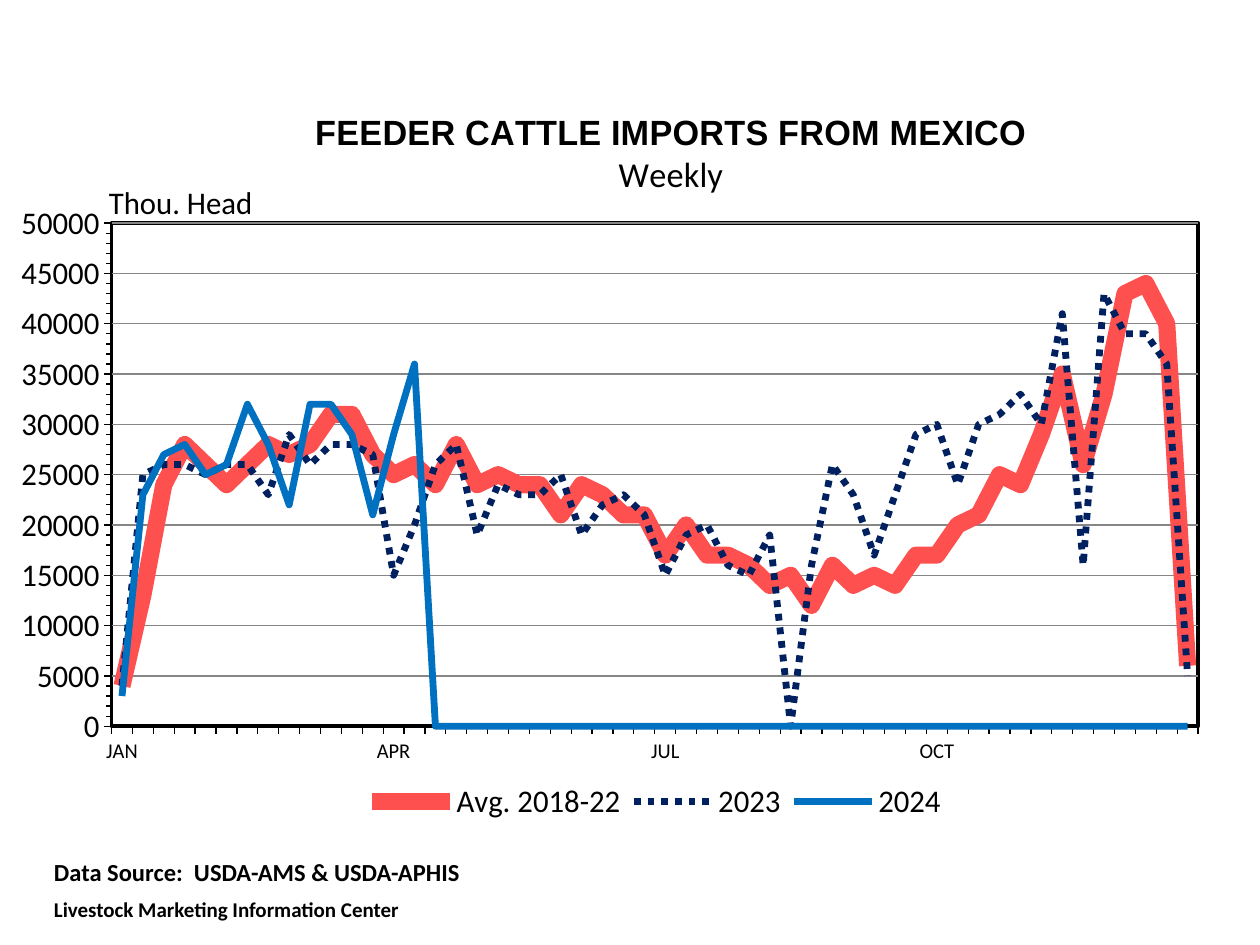
import pptx
import pptx.chart.data
import pptx.dml.color
import pptx.enum.chart
import pptx.enum.dml
import pptx.oxml
import pptx.util
from pptx.oxml.ns import nsdecls, qn

Pt = pptx.util.Pt
WIDTH, HEIGHT = pptx.util.Inches(10), pptx.util.Inches(7.5)
BLACK, WHITE, GRID = "000000", "FFFFFF", "868686"
WEEKS = 52
QUARTERS = {0: "JAN", 13: "APR", 26: "JUL", 39: "OCT"}

# Weekly imports in thousand head
IMPORTS = {
    "Avg. 2018-22": [
        4, 13, 24, 28, 26, 24, 26, 28, 27, 28, 31, 31, 27, 25, 26, 24, 28, 24,
        25, 24, 24, 21, 24, 23, 21, 21, 17, 20, 17, 17, 16, 14, 15, 12, 16, 14,
        15, 14, 17, 17, 20, 21, 25, 24, 29, 35, 26, 33, 43, 44, 40, 6],
    "2023": [
        4, 25, 26, 26, 25, 26, 26, 23, 29, 26, 28, 28, 27, 15, 20, 26, 28, 19,
        24, 23, 23, 25, 19, 22, 23, 21, 15, 19, 20, 16, 15, 19, 0, 16, 26, 23,
        17, 23, 29, 30, 24, 30, 31, 33, 30, 41, 16, 43, 39, 39, 36, 5],
    "2024": [3, 23, 27, 28, 25, 26, 32, 28, 22, 32, 32, 29, 21, 29, 36],
}
DASH = pptx.enum.dml.MSO_LINE
STYLES = {
    "Avg. 2018-22": ("FF5050", 10, DASH.SOLID),
    "2023": ("002060", 4, DASH.ROUND_DOT),
    "2024": ("0070C0", 4, DASH.SOLID),
}


def rgb(code):
    return pptx.dml.color.RGBColor.from_string(code)


def set_all(target, values):
    for name, value in values.items():
        setattr(target, name, value)


def set_font(font, size, bold=False, face="Calibri"):
    set_all(font, {"size": Pt(size), "bold": bold, "name": face})
    font.color.rgb = rgb(BLACK)


def set_line(line, color, width):
    line.color.rgb = rgb(color)
    line.width = Pt(width)


def on_slide(shares):
    """Turn shares of the slide into left, top, width and height."""
    left, top, width, height = shares
    return (int(left * WIDTH), int(top * HEIGHT),
            int(width * WIDTH), int(height * HEIGHT))


def place_part(element, index, x, y, w=None, h=None):
    """Give a chart part a manual layout, in shares of the chart."""
    for old in element.findall(qn("c:layout")):
        element.remove(old)
    target = '<c:layoutTarget val="inner"/>' if element.tag == qn("c:plotArea") else ""
    modes = '<c:xMode val="edge"/><c:yMode val="edge"/>'
    sizes = "".join(f'<c:{key} val="{value}"/>'
                    for key, value in zip("xywh", (x, y, w, h)) if value is not None)
    element.insert(index, pptx.oxml.parse_xml(
        f'<c:layout {nsdecls("c")}><c:manualLayout>{target}{modes}{sizes}'
        "</c:manualLayout></c:layout>"))


def add_heading(chart):
    chart.has_title = True
    heading = chart.chart_title
    heading.include_in_layout = False
    frame = heading.text_frame
    frame.text = "FEEDER CATTLE IMPORTS FROM MEXICO\nWeekly"
    for paragraph, bold, face in zip(frame.paragraphs, (True, False), ("Arial", "Calibri")):
        set_font(paragraph.font, 20, bold, face)
        set_font(paragraph.runs[0].font, 20, bold, face)
    place_part(heading._element, 1, 0.22, 0.03)


def format_week_axis(axis):
    marks = pptx.enum.chart.XL_TICK_MARK
    set_all(axis, {"major_tick_mark": marks.OUTSIDE, "minor_tick_mark": marks.NONE,
                   "has_major_gridlines": False})
    set_font(axis.tick_labels.font, 12)
    set_line(axis.format.line, BLACK, 0.75)
    no_multi_level = axis._element.find(qn("c:noMultiLvlLbl"))
    for tag in ("tickLblSkip", "tickMarkSkip"):
        no_multi_level.addprevious(
            pptx.oxml.parse_xml(f'<c:{tag} {nsdecls("c")} val="1"/>'))


def format_head_axis(axis):
    marks = pptx.enum.chart.XL_TICK_MARK
    set_all(axis, {"minimum_scale": 0, "maximum_scale": 50000,
                   "major_unit": 5000, "minor_unit": 1000,
                   "major_tick_mark": marks.OUTSIDE, "minor_tick_mark": marks.OUTSIDE,
                   "has_major_gridlines": True, "has_title": True})
    set_all(axis.tick_labels, {"number_format": "General", "number_format_is_linked": False})
    set_font(axis.tick_labels.font, 18)
    set_line(axis.format.line, BLACK, 0.75)
    set_line(axis.major_gridlines.format.line, GRID, 0.75)
    frame = axis.axis_title.text_frame
    frame.text = "Thou. Head"
    set_font(frame.paragraphs[0].runs[0].font, 18)
    body = frame._txBody.find(qn("a:bodyPr"))
    body.set("rot", "0")
    body.set("vert", "horz")
    place_part(axis.axis_title._element, 1, 0.045, 0.12)


def format_plot_area(chart):
    area = chart._chartSpace.find(qn("c:chart")).find(qn("c:plotArea"))
    place_part(area, 0, 0.052, 0.185, 0.913, 0.674)
    area.append(pptx.oxml.parse_xml(
        f'<c:spPr {nsdecls("c", "a")}>'
        f'<a:solidFill><a:srgbClr val="{WHITE}"/></a:solidFill>'
        f'<a:ln w="{Pt(2.25)}"><a:solidFill><a:srgbClr val="{BLACK}"/></a:solidFill></a:ln>'
        "</c:spPr>"))


def add_legend(chart):
    chart.has_legend = True
    set_all(chart.legend, {"position": pptx.enum.chart.XL_LEGEND_POSITION.BOTTOM,
                           "include_in_layout": False})
    set_font(chart.legend.font, 18)
    place_part(chart.legend._element, 1, 0.26, 0.93, 0.5, 0.06)


def add_import_chart(slide, box):
    weekly = pptx.chart.data.CategoryChartData(number_format="General")
    weekly.categories = [QUARTERS.get(week, "") for week in range(WEEKS)]
    for name, thousands in IMPORTS.items():
        missing = [None] * (WEEKS - len(thousands))
        weekly.add_series(name, [value * 1000 for value in thousands] + missing)
    chart = slide.shapes.add_chart(
        pptx.enum.chart.XL_CHART_TYPE.LINE, *on_slide(box), weekly).chart
    set_font(chart.font, 18)
    chart.plots[0].vary_by_categories = False
    for series in chart.plots[0].series:
        color, width, dash = STYLES[series.name]
        series.smooth = False
        set_line(series.format.line, color, width)
        series.format.line.dash_style = dash
    add_heading(chart)
    format_week_axis(chart.category_axis)
    format_head_axis(chart.value_axis)
    format_plot_area(chart)
    add_legend(chart)
    # Weeks not yet reported run along the zero line
    blanks = chart._chartSpace.find(qn("c:chart")).find(qn("c:dispBlanksAs"))
    blanks.set("val", "zero")


def add_source_note(slide, box):
    frame = slide.shapes.add_textbox(*on_slide(box)).text_frame
    frame.word_wrap = True
    frame.text = ("Data Source:  USDA-AMS & USDA-APHIS\n"
                  "Livestock Marketing Information Center")
    for paragraph, size in zip(frame.paragraphs, (14, 12)):
        set_font(paragraph.runs[0].font, size, bold=True)
    frame.paragraphs[1].space_before = Pt(6)


def main():
    deck = pptx.Presentation()
    set_all(deck, {"slide_width": WIDTH, "slide_height": HEIGHT})
    slide = deck.slides.add_slide(deck.slide_layouts[6])
    add_import_chart(slide, (0.017, 0.09, 0.967, 0.79))
    add_source_note(slide, (0.033, 0.9, 0.45, 0.085))
    deck.save("out.pptx")


if __name__ == "__main__":
    main()
